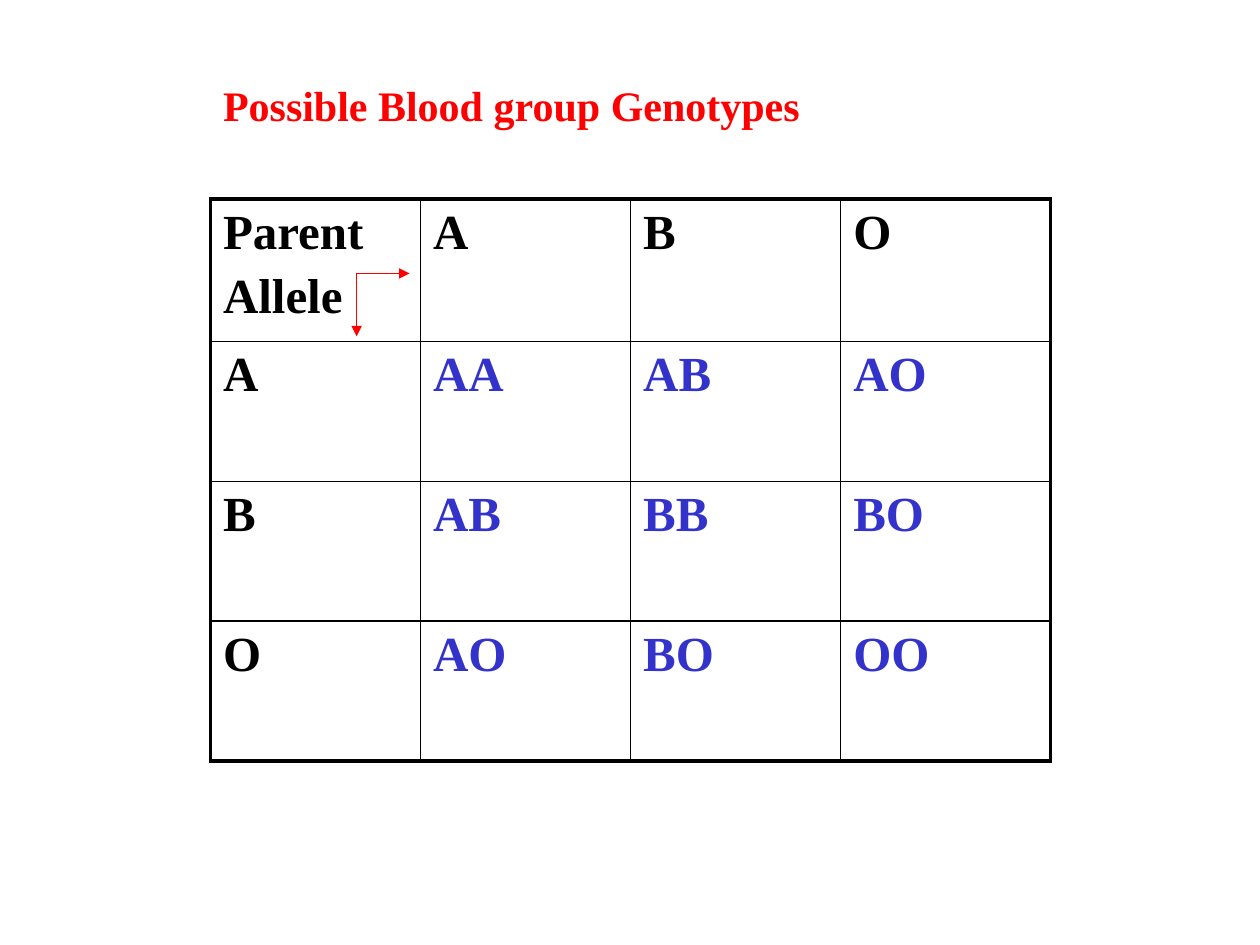
"""Build a slide with a table of the possible blood group genotypes."""
from lxml import etree
from pptx import Presentation
from pptx import util as u
from pptx.dml.color import RGBColor
from pptx.enum import shapes, text
from pptx.oxml import ns

COLORS = {"title": "FF0000", "arrow": "FF0000", "heading": "000000",
          "genotype": "3333CC", "border": "000000"}
ALLELES = ["A", "B", "O"]
SIZE = len(ALLELES) + 1


def format_runs(paragraph, size, color):
    for run in paragraph.runs:
        run.font.name = "Times New Roman"
        run.font.size = u.Pt(size)
        run.font.bold = True
        run.font.color.rgb = RGBColor.from_string(COLORS[color])


def add_border(cell, side, width):
    properties = cell._tc.get_or_add_tcPr()
    line = etree.SubElement(properties, ns.qn(f"a:ln{side}"), w=str(u.Pt(width)))
    fill = etree.SubElement(line, ns.qn("a:solidFill"))
    etree.SubElement(fill, ns.qn("a:srgbClr"), val=COLORS["border"])


presentation = Presentation()
presentation.slide_width = u.Inches(10)
presentation.slide_height = u.Inches(7.5)
slide = presentation.slides.add_slide(presentation.slide_layouts[5])

title = slide.shapes.title
title.left, title.top = u.Inches(1.67), u.Inches(0.58)
title.width, title.height = u.Inches(4.78), u.Inches(0.5)
frame = title.text_frame
frame.text = "Possible Blood group Genotypes"
frame.word_wrap = False
frame.auto_size = text.MSO_AUTO_SIZE.NONE
frame.vertical_anchor = text.MSO_ANCHOR.TOP
frame.paragraphs[0].alignment = text.PP_ALIGN.LEFT
format_runs(frame.paragraphs[0], 24, "title")

table = slide.shapes.add_table(SIZE, SIZE, u.Inches(1.67), u.Inches(1.58),
                               u.Inches(6.67), u.Inches(4.46)).table
table.first_row = False
table.horz_banding = False
for column in table.columns:
    column.width = u.Inches(6.67 / SIZE)
for index, row in enumerate(table.rows):
    row.height = u.Inches(1.11 if index else 1.13)

headings = ["Parent\nAllele"] + ALLELES
for row in range(SIZE):
    for column in range(SIZE):
        cell = table.cell(row, column)
        if row and column:
            content = "".join(sorted([headings[row], headings[column]]))
            color = "genotype"
        else:
            content = headings[row or column]
            color = "heading"
        cell.text_frame.text = content
        for paragraph in cell.text_frame.paragraphs:
            format_runs(paragraph, 28, color)
            spacing = etree.SubElement(paragraph._p.get_or_add_pPr(), ns.qn("a:spcBef"))
            etree.SubElement(spacing, ns.qn("a:spcPct"), val="20000")
        outer_sides = {"L": column == 0, "R": column == SIZE - 1,
                       "T": row == 0, "B": row == SIZE - 1}
        for side, is_outer in outer_sides.items():
            add_border(cell, side, 2.25 if is_outer else 1)
        cell.fill.background()

for end_x, end_y in [(3.25, 2.17), (2.83, 2.67)]:
    arrow = slide.shapes.add_connector(shapes.MSO_CONNECTOR.STRAIGHT, u.Inches(2.83),
                                       u.Inches(2.17), u.Inches(end_x), u.Inches(end_y))
    arrow.line.color.rgb = RGBColor.from_string(COLORS["arrow"])
    arrow.line.width = u.Pt(0.75)
    etree.SubElement(arrow.line._get_or_add_ln(), ns.qn("a:tailEnd"), type="triangle")
    etree.SubElement(arrow._element.spPr, ns.qn("a:effectLst"))

presentation.save("out.pptx")
